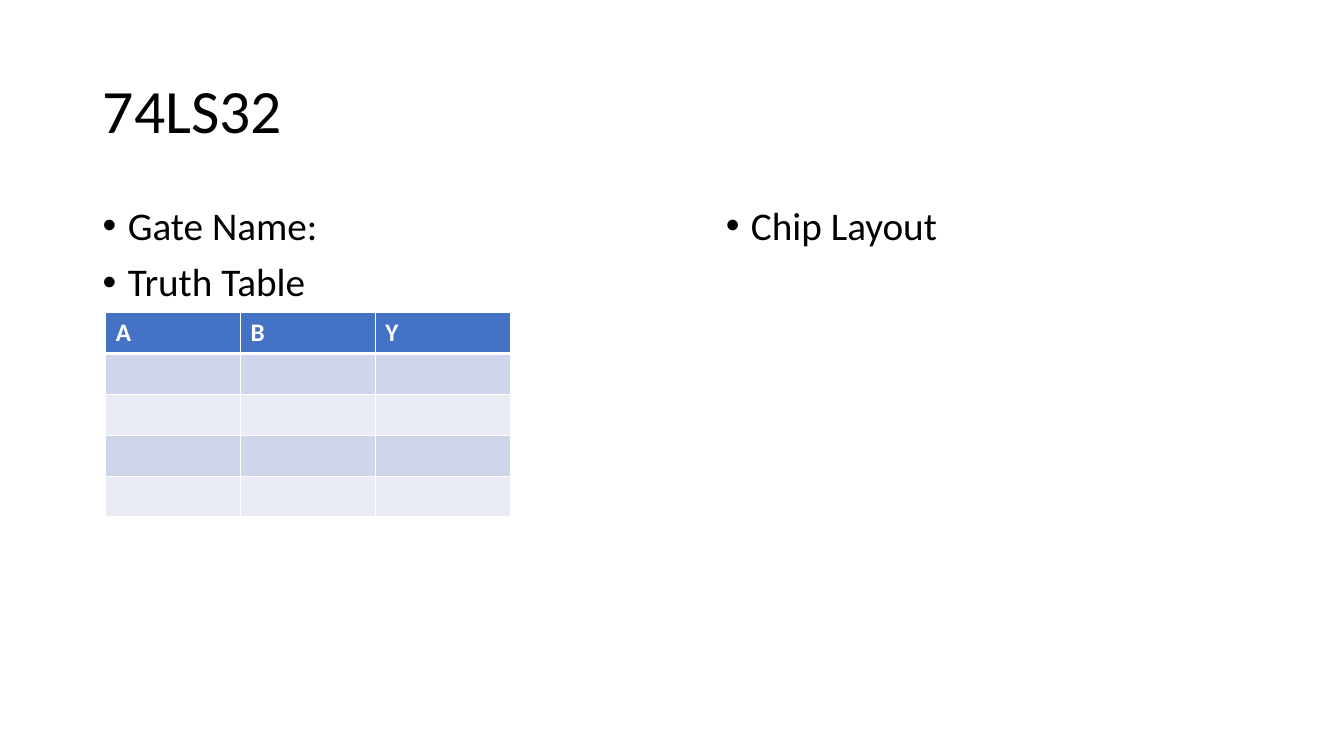
import pptx
import pptx.dml.color
import pptx.enum.text
import pptx.oxml
import pptx.oxml.ns
import pptx.util
from pptx.util import Inches

BLACK = pptx.dml.color.RGBColor(0x00, 0x00, 0x00)
WHITE = pptx.dml.color.RGBColor(0xFF, 0xFF, 0xFF)
HEADER_BLUE = pptx.dml.color.RGBColor(0x44, 0x72, 0xC4)
BAND_DARK = pptx.dml.color.RGBColor(0xCF, 0xD5, 0xEA)
BAND_LIGHT = pptx.dml.color.RGBColor(0xE9, 0xEB, 0xF5)
FONT = "Calibri"


def format_font(paragraph, size, color, bold=False):
    paragraph.font.name = FONT
    paragraph.font.size = pptx.util.Pt(size)
    paragraph.font.color.rgb = color
    paragraph.font.bold = bold


def place_title(slide, text, left, top, width, height):
    title = slide.shapes.title
    title.left, title.top, title.width, title.height = left, top, width, height
    frame = title.text_frame
    frame.text = text
    frame.auto_size = pptx.enum.text.MSO_AUTO_SIZE.NONE
    frame.vertical_anchor = pptx.enum.text.MSO_ANCHOR.MIDDLE
    heading = frame.paragraphs[0]
    heading.alignment = pptx.enum.text.PP_ALIGN.LEFT
    heading.line_spacing = 0.9
    format_font(heading, 44, BLACK)


def add_bullets(slide, topics, left, top, width, height):
    frame = slide.shapes.add_textbox(left, top, width, height).text_frame
    frame.word_wrap = True
    frame.text = "\n".join(topics)
    for topic in frame.paragraphs:
        topic.line_spacing = 0.9
        topic.space_before = pptx.util.Pt(10)
        format_font(topic, 28, BLACK)
        # Hanging bullet
        properties = topic._p.get_or_add_pPr()
        properties.set("marL", str(Inches(0.25)))
        properties.set("indent", str(-Inches(0.25)))
        namespace = pptx.oxml.ns.nsdecls("a")
        for bullet in (f'<a:buFont {namespace} typeface="Arial"/>',
                       f'<a:buChar {namespace} char="•"/>'):
            properties.insert_element_before(
                pptx.oxml.parse_xml(bullet), "a:tabLst", "a:defRPr", "a:extLst")


def set_borders(cell, top_width, bottom_width):
    widths = {"lnL": 1, "lnR": 1, "lnT": top_width, "lnB": bottom_width}
    for side, width in widths.items():
        cell._tc.get_or_add_tcPr().append(pptx.oxml.parse_xml(
            f'<a:{side} {pptx.oxml.ns.nsdecls("a")} w="{pptx.util.Pt(width)}">'
            f'<a:solidFill><a:srgbClr val="{WHITE}"/></a:solidFill></a:{side}>'))


def add_truth_table(slide, signals, row_count, left, top, width, height):
    table = slide.shapes.add_table(
        row_count, len(signals), left, top, width, height).table
    for row in range(row_count):
        for column, signal in enumerate(signals):
            cell = table.cell(row, column)
            # The header is ruled off with a heavier line
            set_borders(cell, 3 if row == 1 else 1, 3 if row == 0 else 1)
            cell.fill.solid()
            if row == 0:
                cell.fill.fore_color.rgb = HEADER_BLUE
                cell.text = signal
                format_font(cell.text_frame.paragraphs[0], 18, WHITE, bold=True)
            else:
                cell.fill.fore_color.rgb = BAND_DARK if row % 2 else BAND_LIGHT


def build_chip_slide(presentation):
    slide = presentation.slides.add_slide(presentation.slide_layouts[5])
    place_title(slide, "74LS32",
                Inches(0.92), Inches(0.4), Inches(11.5), Inches(1.45))
    # Left column: gate and truth table
    add_bullets(slide, ["Gate Name:", "Truth Table"],
                Inches(0.92), Inches(2), Inches(5.01), Inches(4.76))
    add_truth_table(slide, "ABY", 5,
                    Inches(1.05), Inches(3.1), Inches(4.01), Inches(2.03))
    # Right column: chip layout
    add_bullets(slide, ["Chip Layout"],
                Inches(7.1), Inches(2), Inches(5.01), Inches(4.76))


def main():
    presentation = pptx.Presentation()
    presentation.slide_width = Inches(13.33)
    presentation.slide_height = Inches(7.5)
    build_chip_slide(presentation)
    presentation.save("out.pptx")


if __name__ == "__main__":
    main()
